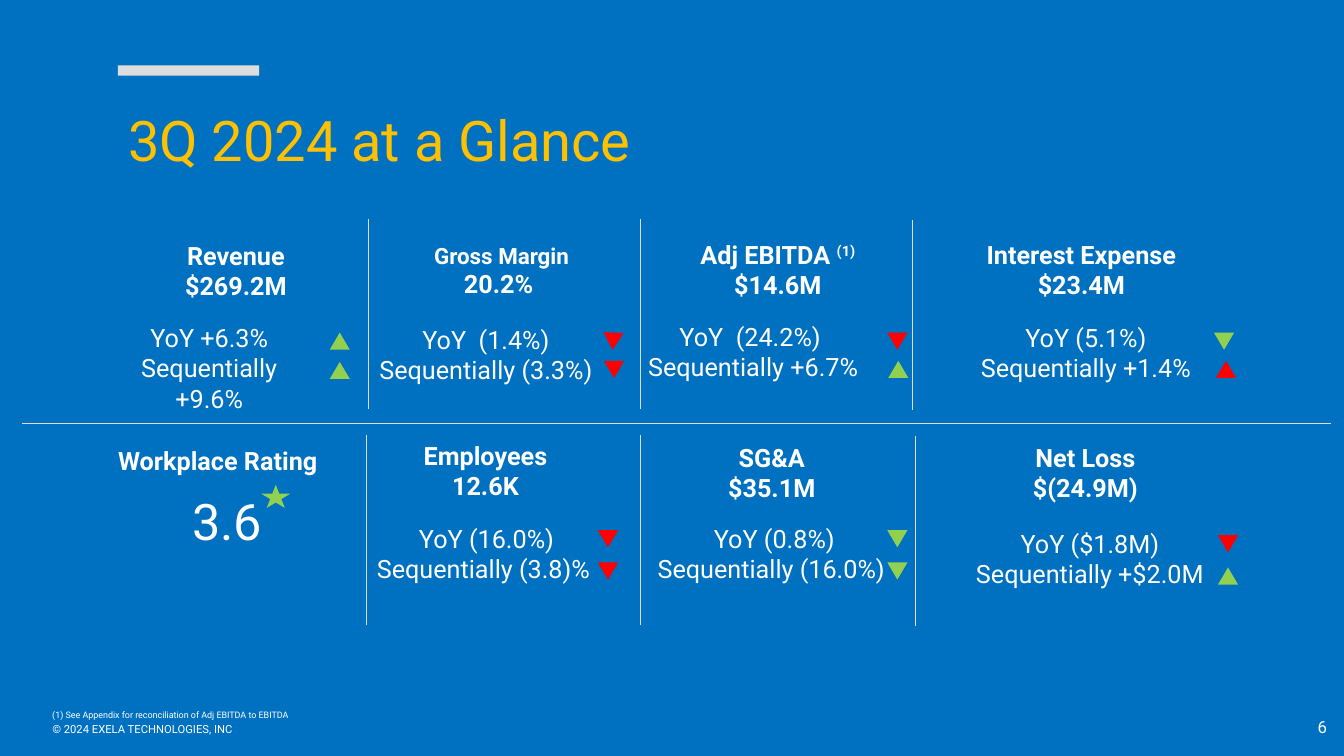
from dataclasses import dataclass

from pptx import Presentation
from pptx.dml.color import RGBColor
from pptx.enum.shapes import MSO_CONNECTOR, MSO_SHAPE
from pptx.enum.text import MSO_ANCHOR, PP_ALIGN
from pptx.oxml.ns import qn
from pptx.util import Inches, Pt

STRAIGHT = MSO_CONNECTOR.STRAIGHT
RECTANGLE = MSO_SHAPE.RECTANGLE
TRIANGLE = MSO_SHAPE.ISOSCELES_TRIANGLE
STAR = MSO_SHAPE.STAR_5_POINT
MIDDLE = MSO_ANCHOR.MIDDLE
LEFT, CENTER, RIGHT = PP_ALIGN.LEFT, PP_ALIGN.CENTER, PP_ALIGN.RIGHT


@dataclass(frozen=True)
class Theme:
    font: str = "Roboto"
    background: str = "0070C0"
    title: str = "FFC000"
    text: str = "FFFFFF"
    rule: str = "DDDDDD"
    good: str = "92D050"
    bad: str = "FF0000"
    title_size: int = 40
    rating_size: int = 36
    body_size: int = 18
    small_heading_size: int = 16
    page_size: int = 12
    note_size: int = 11
    copyright_size: int = 8


THEME = Theme()
GOOD, BAD = THEME.good, THEME.bad
UP, DOWN = 0, 180


@dataclass(frozen=True)
class Line:
    text: str
    size: int = THEME.body_size
    right_indent: float = 0
    raised: str = ""


@dataclass(frozen=True)
class Trend:
    line: Line
    rotation: float
    color: str
    marker: tuple


@dataclass(frozen=True)
class Metric:
    heading_box: tuple
    heading: tuple
    trend_box: tuple
    trends: tuple


METRICS = (
    Metric((1.04, 2.33, 2.6, 0.71), (Line("Revenue"), Line("$269.2M")), (0.94, 3.15, 2.45, 0.71), (
        Trend(Line("YoY +6.3%", right_indent=0.18), UP, GOOD, (3.27, 3.3)),
        Trend(Line("Sequentially +9.6%"), UP, GOOD, (3.27, 3.59)))),
    Metric((3.63, 2.35, 2.69, 0.68),
           (Line("Gross Margin", THEME.small_heading_size), Line("20.2%", right_indent=0.06)),
           (3.54, 3.17, 2.56, 0.71), (
        Trend(Line("YoY  (1.4%)"), 183.3, BAD, (5.98, 3.3)),
        Trend(Line("Sequentially (3.3%)"), DOWN, BAD, (5.99, 3.58)))),
    Metric((6.36, 2.32, 2.71, 0.71), (Line("Adj EBITDA ", raised="(1)"), Line("$14.6M")),
           (6.16, 3.14, 2.68, 0.71), (
        Trend(Line("YoY  (24.2%)", right_indent=0.12), DOWN, BAD, (8.8, 3.3)),
        Trend(Line("Sequentially +6.7%", right_indent=0.06), UP, GOOD, (8.81, 3.58)))),
    Metric((9.35, 2.32, 2.75, 0.71), (Line("Interest Expense"), Line("$23.4M")),
           (9.44, 3.15, 2.66, 0.71), (
        Trend(Line("YoY (5.1%)"), DOWN, GOOD, (12.04, 3.3)),
        Trend(Line("Sequentially +1.4%"), UP, BAD, (12.06, 3.58)))),
    Metric((0.86, 4.37, 2.6, 0.4), (Line("Workplace Rating"),), (), ()),
    Metric((3.48, 4.32, 2.67, 0.71), (Line("Employees"), Line("12.6K")), (3.47, 5.14, 2.71, 0.71), (
        Trend(Line("YoY (16.0%)"), DOWN, BAD, (5.93, 5.26)),
        Trend(Line("Sequentially (3.8)%", right_indent=0.06), DOWN, BAD, (5.93, 5.58)))),
    Metric((6.32, 4.34, 2.67, 0.71), (Line("SG&A"), Line("$35.1M")), (6.35, 5.14, 2.66, 0.71), (
        Trend(Line("YoY (0.8%)"), DOWN, GOOD, (8.8, 5.26)),
        Trend(Line("Sequentially (16.0%)", right_indent=0.06), DOWN, GOOD, (8.8, 5.58)))),
    Metric((9.39, 4.34, 2.75, 0.71), (Line("Net Loss"), Line("$(24.9M)")), (9.48, 5.19, 2.66, 0.71), (
        Trend(Line("YoY ($1.8M)"), DOWN, BAD, (12.08, 5.31)),
        Trend(Line("Sequentially +$2.0M"), UP, GOOD, (12.08, 5.63)))),
)
DIVIDERS = (
    (0.22, 4.2, 13.2, 4.2),
    (3.65, 2.17, 3.65, 4.06), (6.35, 2.17, 6.35, 4.06), (9.05, 2.18, 9.05, 4.07),
    (3.63, 4.32, 3.63, 6.2), (6.35, 4.32, 6.35, 6.2), (9.08, 4.33, 9.08, 6.21),
)


def inches(values):
    return [Inches(value) for value in values]


def format_font(font, size, color=THEME.text, bold=False):
    for name, value in {"name": THEME.font, "size": Pt(size), "bold": bold}.items():
        setattr(font, name, value)
    font.color.rgb = RGBColor.from_string(color)


def add_run(paragraph, text, size, bold, baseline=0):
    """Add a run; baseline is its rise in percent of the type size."""
    run = paragraph.add_run()
    run.text = text
    format_font(run.font, size, bold=bold)
    if baseline:
        run.font._element.set("baseline", str(baseline * 1000))


def add_text(slide, box, lines, alignment=CENTER, bold=False, anchor=MSO_ANCHOR.TOP, baseline=0):
    frame = slide.shapes.add_textbox(*inches(box)).text_frame
    frame.word_wrap = True
    frame.vertical_anchor = anchor
    for index, line in enumerate(lines):
        paragraph = frame.add_paragraph() if index else frame.paragraphs[0]
        paragraph.alignment = alignment
        if line.right_indent:
            paragraph._p.get_or_add_pPr().set("marR", str(Inches(line.right_indent)))
        add_run(paragraph, line.text, line.size, bold, baseline)
        if line.raised:
            add_run(paragraph, line.raised, line.size, bold, 30)


def add_filled_shape(slide, kind, box, color, rotation=0):
    shape = slide.shapes.add_shape(kind, *inches(box))
    shape.shadow.inherit = False
    shape.fill.solid()
    shape.fill.fore_color.rgb = RGBColor.from_string(color)
    shape.line.fill.background()
    shape.rotation = rotation


def add_divider(slide, ends):
    connector = slide.shapes.add_connector(STRAIGHT, *inches(ends))
    connector.line.color.rgb = RGBColor.from_string(THEME.rule)
    connector.line.width = Pt(0.5)
    properties = connector._element.spPr
    properties.append(properties.makeelement(qn("a:effectLst"), {}))


def add_title(slide, text):
    title = slide.shapes.title
    box = dict(zip(("left", "top", "width", "height"), inches((1.17, 0.7, 7.74, 1.45))))
    for name, value in box.items():
        setattr(title, name, value)
    title.text_frame.text = text
    title.text_frame.vertical_anchor = MIDDLE
    paragraph = title.text_frame.paragraphs[0]
    paragraph.alignment = LEFT
    paragraph.line_spacing = 0.9
    format_font(paragraph.runs[0].font, THEME.title_size, THEME.title)


def add_metric(slide, metric):
    add_text(slide, metric.heading_box, metric.heading, bold=True)
    if metric.trends:
        add_text(slide, metric.trend_box, [trend.line for trend in metric.trends])
    for trend in metric.trends:
        add_filled_shape(slide, TRIANGLE, (*trend.marker, 0.2, 0.17), trend.color, trend.rotation)


def add_footer(slide):
    note = Line("(1) See Appendix for reconciliation of Adj EBITDA to EBITDA", THEME.note_size)
    owner = Line("© 2024 EXELA TECHNOLOGIES, INC", THEME.copyright_size)
    add_text(slide, (0.42, 6.99, 11.23, 0.22), [note], LEFT, baseline=70)
    add_text(slide, (0.42, 7.12, 4.05, 0.24), [owner], LEFT)
    add_text(slide, (10.26, 7.01, 3, 0.4), [Line("6", THEME.page_size)], RIGHT, anchor=MIDDLE)


def main():
    presentation = Presentation()
    presentation.slide_width, presentation.slide_height = inches((13.33, 7.5))
    slide = presentation.slides.add_slide(presentation.slide_layouts[5])
    slide.background.fill.solid()
    slide.background.fill.fore_color.rgb = RGBColor.from_string(THEME.background)

    add_filled_shape(slide, RECTANGLE, (1.17, 0.65, 1.4, 0.1), THEME.rule)
    add_title(slide, "3Q 2024 at a Glance")
    for ends in DIVIDERS:
        add_divider(slide, ends)
    for metric in METRICS:
        add_metric(slide, metric)
    add_text(slide, (1.41, 4.81, 1.69, 0.71), [Line("3.6", THEME.rating_size)], anchor=MIDDLE)
    add_filled_shape(slide, STAR, (2.59, 4.81, 0.29, 0.23), GOOD)
    add_footer(slide)
    presentation.save("out.pptx")


if __name__ == "__main__":
    main()
